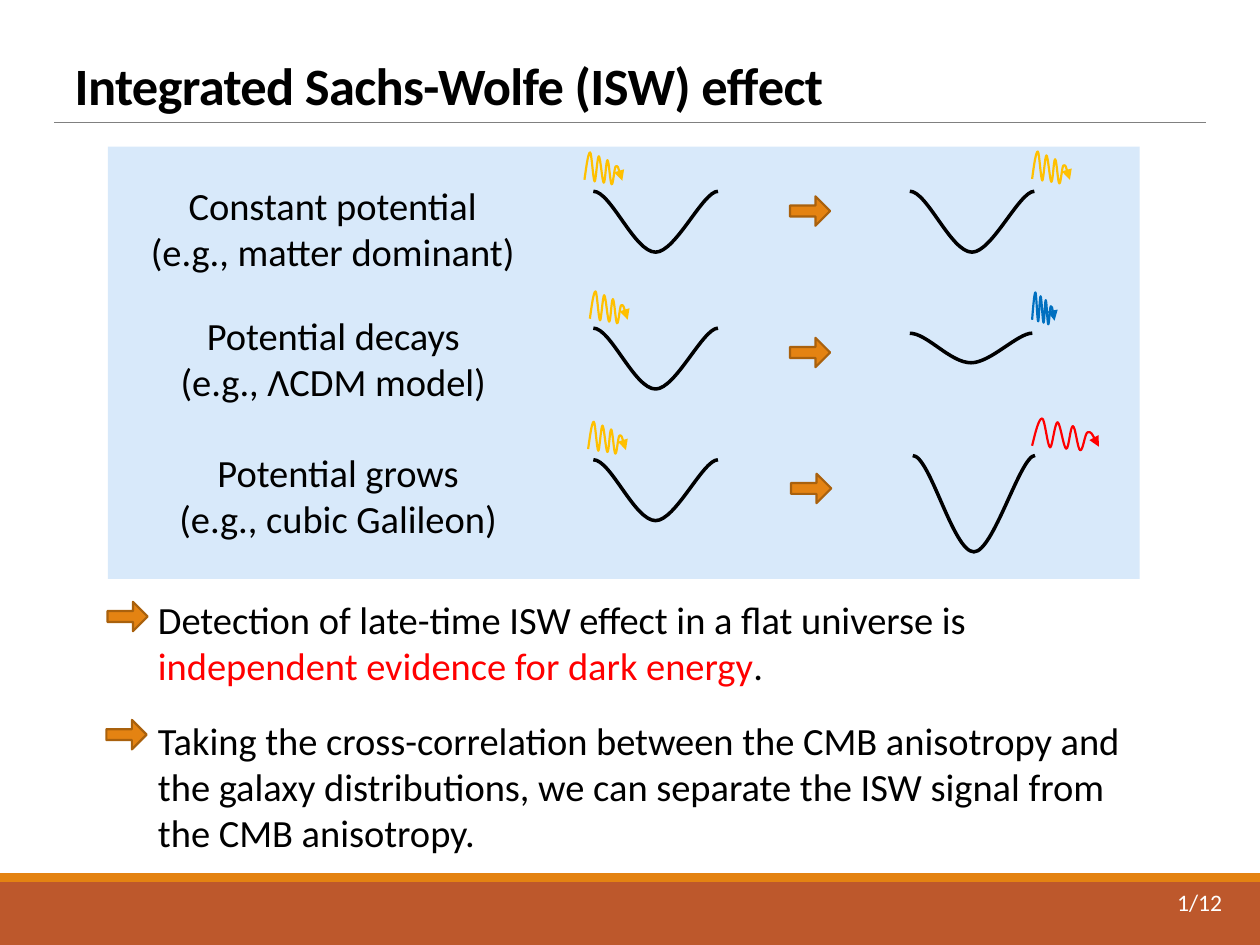
from math import cos, radians, sin
from pptx import Presentation
from pptx.dml.color import RGBColor
from pptx.enum.shapes import MSO_CONNECTOR, MSO_SHAPE
from pptx.enum.text import MSO_ANCHOR, MSO_AUTO_SIZE, PP_ALIGN
from pptx.oxml.ns import qn
from pptx.util import Pt
from lxml.etree import SubElement

FONT = "Calibri"
BLACK, WHITE, RED, BLUE, YELLOW = "000000", "FFFFFF", "FF0000", "0070C0", "FFC000"
ORANGE, RUST, BROWN, PALE, GRAY = "E48312", "BD582C", "A9610D", "D8E9FA", "808080"

TILT = 328.1
WELL = [(0, 0), (0.14, 0), (0.33, 1), (0.5, 1), (0.66, 1), (0.88, 0), (1, 0)]
WAVE = [(0, 0.85), (0.05, 0.42), (0.1, 0), (0.15, 0), (0.19, 0), (0.23, 0.88),
        (0.27, 0.9), (0.3, 0.92), (0.34, 0.12), (0.38, 0.12), (0.42, 0.12),
        (0.47, 0.92), (0.51, 0.94), (0.55, 0.96), (0.57, 0.24), (0.61, 0.24),
        (0.65, 0.26), (0.68, 0.96), (0.72, 0.99), (0.76, 1.02), (0.79, 0.46),
        (0.83, 0.43), (0.89, 0.4), (0.97, 0.76), (1, 0.88)]


def color(hex_text):
    return RGBColor.from_string(hex_text)


def set_line(shape, hex_text, width):
    shape.line.color.rgb = color(hex_text)
    shape.line.width = Pt(width)


def add_block(s, kind, x, y, w, h, fill):
    sp = s.shapes.add_shape(kind, Pt(x), Pt(y), Pt(w), Pt(h))
    sp.shadow.inherit = False
    sp.fill.solid()
    sp.fill.fore_color.rgb = color(fill)
    sp.line.fill.background()
    return sp


def add_arrow(s, x, y):
    sp = add_block(s, MSO_SHAPE.RIGHT_ARROW, x, y, 23, 16.8, ORANGE)
    sp.adjustments[0] = 0.37
    set_line(sp, BROWN, 1.25)


def add_rule(s, x1, x2, y):
    cn = s.shapes.add_connector(MSO_CONNECTOR.STRAIGHT, Pt(x1), Pt(y), Pt(x2), Pt(y))
    set_line(cn, GRAY, 0.5)
    SubElement(cn.element.spPr, qn("a:effectLst"))


def add_curve(s, nodes, frame, hex_text, width):
    x, y, w, h = frame
    points = [(Pt(u), Pt(v)) for u, v in nodes]
    fb = s.shapes.build_freeform(*points[0])
    fb.add_line_segments(points[1:], close=False)
    sp = fb.convert_to_shape()
    sp.left, sp.top, sp.width, sp.height = Pt(x), Pt(y), Pt(w), Pt(h)
    outline = sp.element.find(".//" + qn("a:path"))
    for child in list(outline):
        outline.remove(child)
    outline.set("w", str(Pt(w)))
    outline.set("h", str(Pt(h)))
    groups = [("a:moveTo", points[:1])]
    groups += [("a:cubicBezTo", points[i:i + 3]) for i in range(1, len(points), 3)]
    for tag, group in groups:
        step = SubElement(outline, qn(tag))
        for px, py in group:
            SubElement(step, qn("a:pt"), x=str(px - Pt(x)), y=str(py - Pt(y)))
    sp.shadow.inherit = False
    sp.fill.background()
    set_line(sp, hex_text, width)
    return sp


def place(nodes, x, y, w, h):
    return [(x + w * u, y + h * v) for u, v in nodes]


def turn(nodes, frame, degrees):
    x, y, w, h = frame
    cx, cy = x + w / 2, y + h / 2
    c, d = cos(radians(degrees)), sin(radians(degrees))
    return [(cx + c * (u - cx) - d * (v - cy), cy + d * (u - cx) + c * (v - cy))
            for u, v in nodes]


def add_well(s, box, frame):
    nodes = turn(place(WELL, *box), frame, -TILT)
    add_curve(s, nodes, frame, BLACK, 2).rotation = TILT


def add_wave(s, x, y, w, hex_text):
    sp = add_curve(s, place(WAVE, x, y, w, 18.4), (x, y, w, 18.4), hex_text, 1.25)
    SubElement(sp.line._get_or_add_ln(), qn("a:tailEnd"), type="triangle")


def style(p, size, hex_text, align=PP_ALIGN.LEFT):
    p.alignment = align
    p.font.name = FONT
    p.font.size = Pt(size)
    p.font.color.rgb = color(hex_text)


def add_text(s, x, y, w, h, lines, size=22, hex_text=BLACK, align=PP_ALIGN.LEFT, wrap=True):
    tf = s.shapes.add_textbox(Pt(x), Pt(y), Pt(w), Pt(h)).text_frame
    tf.word_wrap = wrap
    tf.auto_size = MSO_AUTO_SIZE.SHAPE_TO_FIT_TEXT
    for i, line in enumerate(lines):
        p = tf.paragraphs[0] if i == 0 else tf.add_paragraph()
        p.text = line
        style(p, size, hex_text, align)
    return tf


def set_title(s, text):
    sp = s.shapes.title
    sp.left, sp.top, sp.width, sp.height = Pt(35.5), Pt(16.3), Pt(649.4), Pt(54)
    tf = sp.text_frame
    tf.vertical_anchor = MSO_ANCHOR.BOTTOM
    p = tf.paragraphs[0]
    r = p.add_run()
    r.text = text
    r.font._element.set("spc", "-38")
    style(p, 30, BLACK)
    p.font.bold = True
    p.line_spacing = 0.85


def add_frame(s):
    add_block(s, MSO_SHAPE.RECTANGLE, 0, 504, 720, 36, RUST)
    add_block(s, MSO_SHAPE.RECTANGLE, 0, 499, 720, 5, ORANGE)
    add_rule(s, 31, 689, 70.2)
    tf = add_text(s, 627.6, 501.3, 77.8, 28.8, ["1/12"], 13.5, WHITE, PP_ALIGN.RIGHT)
    tf.auto_size = MSO_AUTO_SIZE.NONE
    tf.vertical_anchor = MSO_ANCHOR.MIDDLE


def add_potentials(s):
    add_block(s, MSO_SHAPE.RECTANGLE, 61.6, 83.8, 589.7, 247, PALE)
    rows = [
        (["Constant potential", "(e.g., matter dominant)"], (72, 100.3, 236.2),
         (334, 87.1), 109.3, (451.4, 112.2), (519.9, 109.3, 71.2, 34.8),
         (528.5, 89.2, 60.5, 49.7), (86.6, 21.6, YELLOW)),
        (["Potential decays", "(e.g., ΛCDM model)"], (84, 174.8, 213),
         (337.1, 166.5), 187.5, (451.4, 193), (519.9, 190.4, 70, 16.9),
         (524.9, 172.1, 59.8, 36.7), (167.1, 12.8, BLUE)),
        (["Potential grows", "(e.g., cubic Galileon)"], (84.2, 252.9, 218),
         (336.1, 241), 262.7, (452, 270.7), (521.6, 260.3, 69.9, 55.1),
         (532.8, 240.5, 61.2, 66.2), (239.1, 38.2, RED)),
    ]
    for lines, (x, y, w), wave, well_y, arrow, box, frame, (wave_y, wave_w, hue) in rows:
        add_text(s, x, y, w, 60.5, lines, align=PP_ALIGN.CENTER)
        add_well(s, (339.1, well_y, 71.2, 34.8), (347, well_y - 20.1, 60.5, 49.7))
        add_wave(s, *wave, 21.6, YELLOW)
        add_arrow(s, *arrow)
        add_well(s, box, frame)
        add_wave(s, 589.8, wave_y, wave_w, hue)


def add_conclusions(s):
    add_arrow(s, 61.4, 343.9)
    tf = add_text(s, 83.2, 337.2, 487.4, 60.5,
                  ["Detection of late-time ISW effect in a flat universe is", ""], wrap=False)
    p = tf.paragraphs[1]
    for text, hue in (("independent evidence for dark energy", RED), (".", BLACK)):
        r = p.add_run()
        r.text = text
        r.font.color.rgb = color(hue)
    add_arrow(s, 60.8, 411.4)
    add_text(s, 83.2, 406, 575.3, 87.1,
             ["Taking the cross-correlation between the CMB anisotropy and",
              "the galaxy distributions, we can separate the ISW signal from",
              "the CMB anisotropy."], wrap=False)


def main():
    prs = Presentation()
    prs.slide_width, prs.slide_height = Pt(720), Pt(540)
    s = prs.slides.add_slide(prs.slide_layouts[5])
    add_frame(s)
    set_title(s, "Integrated Sachs-Wolfe (ISW) effect")
    add_potentials(s)
    add_conclusions(s)
    prs.save("out.pptx")


if __name__ == "__main__":
    main()
